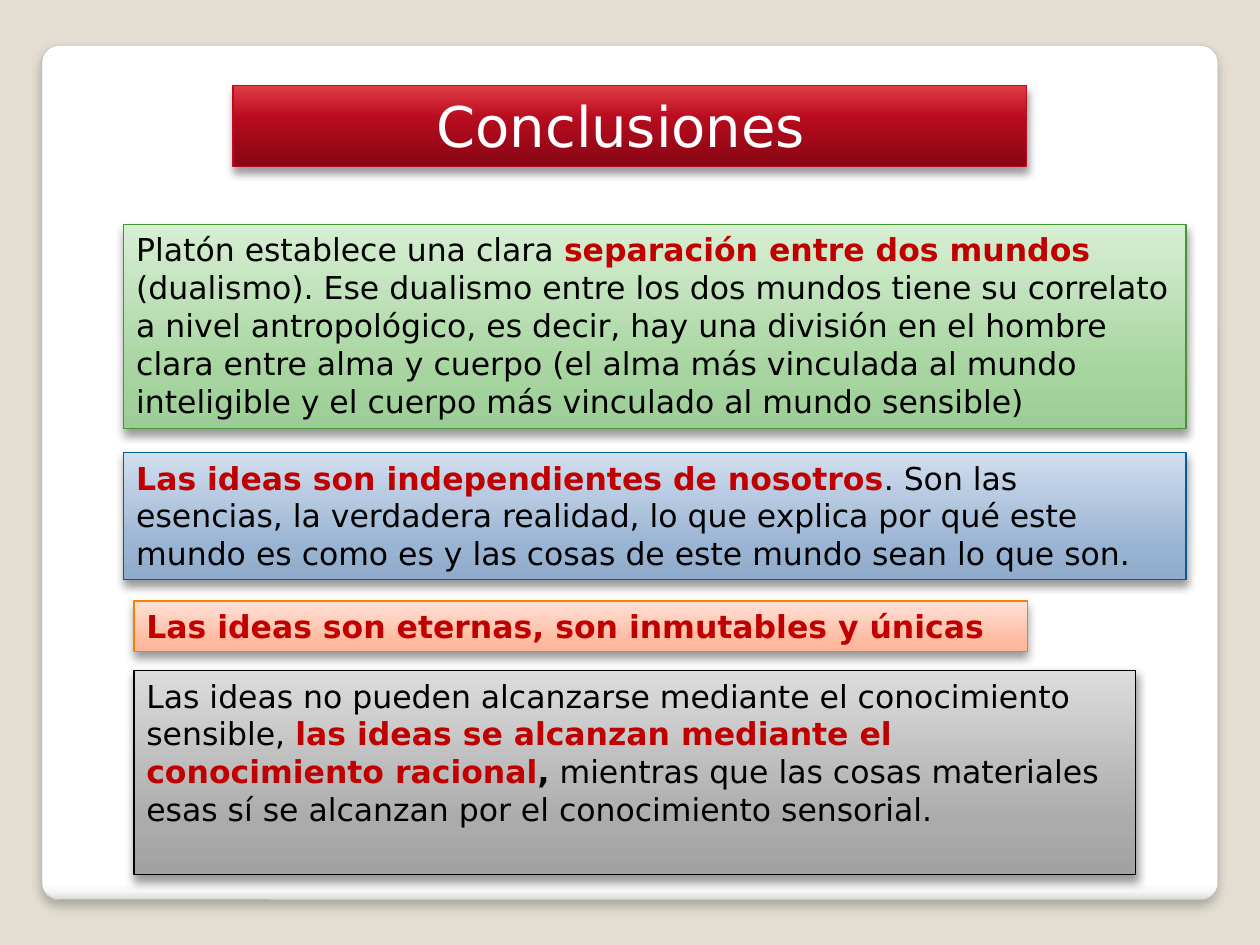
from dataclasses import dataclass

from lxml.etree import SubElement
from pptx import Presentation
from pptx.dml.color import RGBColor
from pptx.enum.shapes import MSO_SHAPE
from pptx.enum.text import MSO_ANCHOR, MSO_AUTO_SIZE, PP_ALIGN
from pptx.oxml.ns import qn
from pptx.util import Inches, Pt

COLS, ROWS = 100, 75
WIDTH, HEIGHT = Inches(10), Inches(7.5)


@dataclass(frozen=True)
class Theme:
    """Hold the colours, type and shadows of the slide."""
    font: str = "DejaVu Sans"
    head: int = 32
    body: int = 18
    back: str = "E3DED1"
    light: str = "FFFFFF"
    ink: str = "000000"
    mark: str = "C00000"
    card: tuple = ((0, "FFFFFF"), (98, "FFFFFF"), (99, "F7F7F7"), (100, "DADADA"))
    rim: str = "A4A4A4"
    red: tuple = ((0, "870614"), (60, "B80B1E"), (100, "E13C45"))
    green: tuple = ((0, "9DCD96"), (25, "A5D49E"), (100, "D7EED3"))
    blue: tuple = ((0, "90ABCB"), (25, "99B3D2"), (100, "D1DEEE"))
    peach: tuple = ((0, "FFB598"), (25, "FFBCA2"), (100, "FFE1D8"))
    grey: tuple = ((0, "A2A2A2"), (25, "ABABAB"), (100, "DCDCDC"))
    edges: tuple = ("BC0B1F", "439631", "035E94", "F97F00", "000000")
    soft: tuple = (25, 6, 4)
    deep: tuple = (40, 5.2, 3)


@dataclass(frozen=True)
class Box:
    """Mark a place on the grid, in columns and rows."""
    col: float
    row: float
    cols: float
    rows: float

    def inset(self, col, row, cols, rows):
        """Return a box set out from this box's corner."""
        return Box(self.col + col, self.row + row, cols, rows)

    def place(self):
        """Return left, top, width and height as slide lengths."""
        return (round(self.col * WIDTH / COLS), round(self.row * HEIGHT / ROWS),
                round(self.cols * WIDTH / COLS), round(self.rows * HEIGHT / ROWS))


THEME = Theme()


def tint(parent, tone, alpha=None):
    """Add a colour, with its alpha share if given, to an element."""
    node = SubElement(parent, qn("a:srgbClr"), val=tone)
    if alpha is not None:
        SubElement(node, qn("a:alpha"), val=str(alpha * 1000))


def panel(slide, box, stops, edge, kind=MSO_SHAPE.RECTANGLE, angle=270,
          weight=0.75, shade=THEME.deep):
    """Draw a shape with a gradient, an edge and a shadow below it."""
    shape = slide.shapes.add_shape(kind, *box.place())
    shape.fill.gradient()
    grad = shape._element.spPr.find(qn("a:gradFill"))
    ramp = grad.find(qn("a:gsLst"))
    for old in list(ramp):
        ramp.remove(old)
    for spot, tone in stops:
        tint(SubElement(ramp, qn("a:gs"), pos=str(spot * 1000)), tone)
    grad.find(qn("a:lin")).set("ang", str(angle * 60000))
    shape.line.color.rgb = RGBColor.from_string(edge)
    shape.line.width = Pt(weight)
    shape.shadow.inherit = False
    alpha, blur, dist = shade
    cast = SubElement(shape._element.spPr.find(qn("a:effectLst")), qn("a:outerShdw"),
                      blurRad=str(Pt(blur)), dist=str(Pt(dist)), dir="5400000",
                      algn="ctr", rotWithShape="0")
    tint(cast, THEME.ink, alpha)
    return shape


def write(shape, runs, size=THEME.body, align=PP_ALIGN.LEFT, grow=True):
    """Set runs of text, tone and weight in a shape."""
    frame = shape.text_frame
    frame.word_wrap = True
    frame.vertical_anchor = MSO_ANCHOR.TOP
    frame.auto_size = MSO_AUTO_SIZE.SHAPE_TO_FIT_TEXT if grow else MSO_AUTO_SIZE.NONE
    para = frame.paragraphs[0]
    para.alignment = align
    for text, tone, bold in runs:
        run = para.add_run()
        run.text = text
        run.font.name = THEME.font
        run.font.size = Pt(size)
        run.font.bold = bold
        run.font.color.rgb = RGBColor.from_string(tone)


def plain(text):
    """Return a run in the body ink."""
    return text, THEME.ink, False


def strong(text, tone=THEME.mark):
    """Return a bold run that stands out."""
    return text, tone, True


def sheet(slide, box):
    """Draw the rounded card behind the text."""
    card = panel(slide, box, THEME.card, THEME.rim, kind=MSO_SHAPE.ROUNDED_RECTANGLE,
                 angle=90, weight=0.16, shade=THEME.soft)
    card.adjustments[0] = 0.02


def banner(slide, box):
    """Draw the title bar."""
    bar = panel(slide, box, THEME.red, THEME.edges[0])
    write(bar, [("Conclusiones ", THEME.light, False)], size=THEME.head,
          align=PP_ALIGN.CENTER)


def notes(slide, box):
    """Draw the four notes down the box."""
    step = 0.8
    items = (
        (box.inset(0, 0, box.cols, 16.2), THEME.green, True, [
            plain("Platón establece una clara "),
            strong("separación entre dos mundos "),
            plain("(dualismo). Ese dualismo entre los dos mundos tiene su correlato "
                  "a nivel antropológico, es decir, hay una división en el hombre "
                  "clara entre alma y cuerpo (el alma más vinculada al mundo "
                  "inteligible y el cuerpo más vinculado al mundo sensible)")]),
        (box.inset(0, 18.1, box.cols, 10.1), THEME.blue, True, [
            strong("Las ideas son independientes de nosotros"),
            plain(". Son las esencias, la verdadera realidad, lo que explica por qué "
                  "este mundo es como es y las cosas de este mundo sean lo que son.")]),
        (box.inset(step, 29.9, 70.9, 4), THEME.peach, True, [
            strong("Las ideas son eternas, son inmutables y únicas")]),
        (box.inset(step, 35.4, 79.5, 16.2), THEME.grey, False, [
            plain("Las ideas no pueden alcanzarse mediante el conocimiento sensible, "),
            strong("las ideas se alcanzan mediante el conocimiento racional"),
            strong(",", tone=THEME.ink),
            plain(" mientras que las cosas materiales esas sí se alcanzan por el "
                  "conocimiento sensorial.")]),
    )
    for (spot, stops, grow, runs), edge in zip(items, THEME.edges[1:]):
        write(panel(slide, spot, stops, edge), runs, grow=grow)


def main():
    """Build the slide and save it."""
    deck = Presentation()
    deck.slide_width, deck.slide_height = WIDTH, HEIGHT
    slide = deck.slides.add_slide(deck.slide_layouts[6])
    fill = slide.background.fill
    fill.solid()
    fill.fore_color.rgb = RGBColor.from_string(THEME.back)
    card = Box(3.33, 3.6, 93.33, 67.8)
    sheet(slide, card)
    banner(slide, card.inset(15.17, 3.2, 63, 6.4))
    notes(slide, card.inset(6.5, 14.2, 84.3, 51.6))
    deck.save("out.pptx")


if __name__ == "__main__":
    main()
